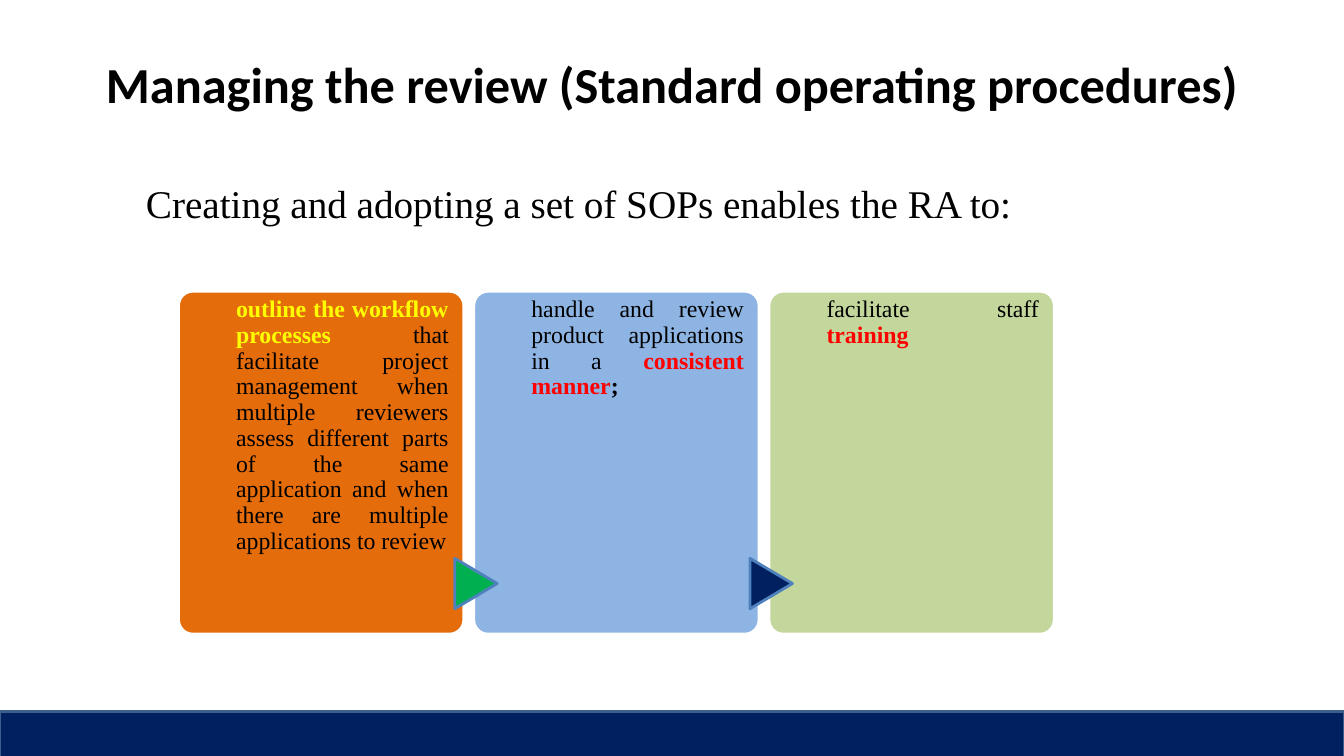
"""Build the slide on managing the review with standard operating procedures."""
import dataclasses
import typing

import pptx
import pptx.dml.color
import pptx.enum.shapes
import pptx.enum.text
import pptx.shapes.autoshape
import pptx.slide
import pptx.text.text
import pptx.util

Cm = pptx.util.Cm
Pt = pptx.util.Pt
ShapeType = pptx.enum.shapes.MSO_SHAPE
Align = pptx.enum.text.PP_ALIGN

SERIF = "Times New Roman"
BLACK, WHITE, RED, YELLOW, NAVY = "000000", "FFFFFF", "FF0000", "FFFF00", "002060"
CARD_LEFT, CARD_TOP, CARD_WIDTH, CARD_HEIGHT = 4.5, 7.34, 7.19, 8.64
CARD_PITCH = 7.44
TEXT_INDENT, TEXT_WIDTH = 1.45, 5.36
ARROW_WIDTH, ARROW_HEIGHT, ARROW_TOP = 1.27, 1.07, 14.17


@dataclasses.dataclass
class Phrase:
    """A stretch of card text in one colour and weight."""
    text: str
    color: str = BLACK
    bold: bool = False


@dataclasses.dataclass
class Card:
    """A benefit card, with the colour of the arrow that leads to it."""
    fill: str
    phrases: list[Phrase]
    arrow_fill: typing.Optional[str] = None


CARDS = [
    Card("E46C0A", [
        Phrase("outline the workflow processes ", YELLOW, True),
        Phrase("that facilitate project management when multiple reviewers assess "
               "different parts of the same application and when there are multiple "
               "applications to review"),
    ]),
    Card("8EB4E3", [
        Phrase("handle and review product applications in a "),
        Phrase("consistent manner", RED, True),
        Phrase(";", BLACK, True),
    ], "00B050"),
    Card("C3D69B", [
        Phrase("facilitate staff "),
        Phrase("training", RED, True),
    ], NAVY),
]


def rgb(value: str) -> pptx.dml.color.RGBColor:
    """Turn a hex string into a colour."""
    return pptx.dml.color.RGBColor.from_string(value)


def set_font(font: pptx.text.text.Font, name: str, size: float, color: str = BLACK) -> None:
    """Set the typeface, size and colour of a font."""
    font.name = name
    font.size = Pt(size)
    font.color.rgb = rgb(color)


def add_box(slide: pptx.slide.Slide, kind: ShapeType, left: float, top: float,
            width: float, height: float, fill: str, line: str) -> pptx.shapes.autoshape.Shape:
    """Add a filled and outlined shape, placed in centimetres."""
    shape = slide.shapes.add_shape(kind, Cm(left), Cm(top), Cm(width), Cm(height))
    shape.shadow.inherit = False
    shape.fill.solid()
    shape.fill.fore_color.rgb = rgb(fill)
    shape.line.color.rgb = rgb(line)
    shape.line.width = Pt(2)
    return shape


def add_text_frame(slide: pptx.slide.Slide, left: float, top: float,
                   width: float, height: float) -> pptx.text.text.TextFrame:
    """Add a wrapping text box, placed in centimetres."""
    frame = slide.shapes.add_textbox(Cm(left), Cm(top), Cm(width), Cm(height)).text_frame
    frame.word_wrap = True
    return frame


def add_card(slide: pptx.slide.Slide, card: Card, left: float) -> None:
    """Draw a card, the arrow leading to it and its text."""
    panel = add_box(slide, ShapeType.ROUNDED_RECTANGLE, left, CARD_TOP,
                    CARD_WIDTH, CARD_HEIGHT, card.fill, WHITE)
    panel.adjustments[0] = 0.05
    if card.arrow_fill:
        arrow = add_box(slide, ShapeType.FLOWCHART_EXTRACT, left - 0.58, ARROW_TOP,
                        ARROW_WIDTH, ARROW_HEIGHT, card.arrow_fill, "4F81BD")
        arrow.rotation = 90
    frame = add_text_frame(slide, left + TEXT_INDENT, CARD_TOP, TEXT_WIDTH, CARD_HEIGHT)
    frame.margin_left = frame.margin_right = frame.margin_bottom = 0
    frame.margin_top = Cm(0.15)
    paragraph = frame.paragraphs[0]
    paragraph.alignment = Align.JUSTIFY
    paragraph.line_spacing = 0.9
    for phrase in card.phrases:
        run = paragraph.add_run()
        run.text = phrase.text
        set_font(run.font, SERIF, 17, phrase.color)
        run.font.bold = phrase.bold


def add_title(slide: pptx.slide.Slide) -> None:
    """Place and format the slide title."""
    title = slide.shapes.title
    title.left, title.top, title.width, title.height = Cm(1.7), Cm(0.5), Cm(30.48), Cm(3.18)
    frame = title.text_frame
    frame.text = "Managing the review (Standard operating procedures)"
    frame.auto_size = pptx.enum.text.MSO_AUTO_SIZE.NONE
    frame.vertical_anchor = pptx.enum.text.MSO_ANCHOR.MIDDLE
    paragraph = frame.paragraphs[0]
    paragraph.alignment = Align.CENTER
    set_font(paragraph.font, "Calibri", 36)
    paragraph.font.bold = True


def main() -> None:
    """Build and save the presentation."""
    presentation = pptx.Presentation()
    presentation.slide_width = Cm(33.87)
    presentation.slide_height = Cm(19.05)
    slide = presentation.slides.add_slide(presentation.slide_layouts.get_by_name("Title Only"))
    add_title(slide)
    for index, card in enumerate(CARDS):
        add_card(slide, card, CARD_LEFT + index * CARD_PITCH)
    introduction = add_text_frame(slide, 3.43, 4.39, 26.97, 1.45)
    introduction.text = "Creating and adopting a set of SOPs enables the RA to:"
    set_font(introduction.paragraphs[0].font, SERIF, 28)
    add_box(slide, ShapeType.RECTANGLE, 0, 17.93, 33.87, 1.19, NAVY, "3A5F8C")
    presentation.save("out.pptx")


if __name__ == "__main__":
    main()
